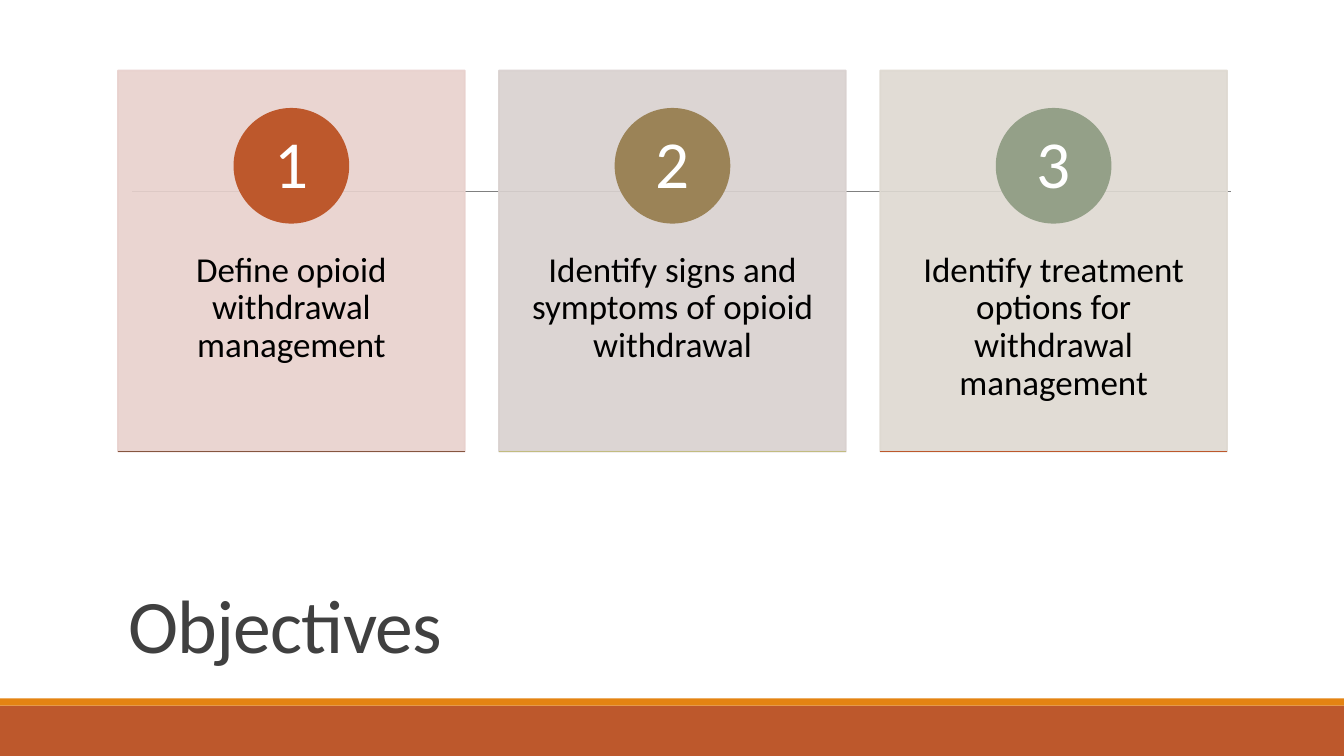
from dataclasses import dataclass

from lxml import etree
from pptx import Presentation
from pptx.dml.color import RGBColor
from pptx.enum.shapes import MSO_CONNECTOR, MSO_SHAPE
from pptx.enum.text import MSO_ANCHOR, PP_ALIGN
from pptx.oxml.ns import qn
from pptx.util import Inches, Pt

RECT, OVAL = MSO_SHAPE.RECTANGLE, MSO_SHAPE.OVAL
STRAIGHT = MSO_CONNECTOR.STRAIGHT
TOP, MIDDLE, BOTTOM = MSO_ANCHOR.TOP, MSO_ANCHOR.MIDDLE, MSO_ANCHOR.BOTTOM
LEFT, CENTER = PP_ALIGN.LEFT, PP_ALIGN.CENTER

SLIDE_W, SLIDE_H = 13.33, 7.5
GRID_LEFT, COLUMN_STEP = 1.17, 3.78
CARD_TOP, CARD_W, CARD_H = 0.7, 3.44, 3.78
TEXT_TOP, TEXT_H = 2.14, 2.27
BADGE_TOP, BADGE_SIZE = 1.08, 1.13
NUMBER_TOP, NUMBER_SIZE = 1.25, 0.8
TITLE_BOX = (GRID_LEFT, 4.93, 11, 1.76)
BAND_TOP, STRIPE_H = 7, 0.07
RULE_LEFT, RULE_RIGHT, RULE_Y = 1.31, 12.21, 1.9
CARD_ALPHA = 90

COLORS = {
    "band": "BD582C",
    "stripe": "E48312",
    "rule": "808080",
    "title": "404040",
    "text": "000000",
    "number": "FFFFFF",
}


@dataclass(frozen=True)
class Objective:
    text: str
    card: str
    badge: str
    base: str


@dataclass(frozen=True)
class TextStyle:
    size: float
    color: str
    align: PP_ALIGN
    anchor: MSO_ANCHOR
    spacing: float
    insets: tuple[float, float]


TITLE = TextStyle(54, COLORS["title"], LEFT, BOTTOM, 0.85, (0.1, 0.05))
BODY = TextStyle(25, COLORS["text"], CENTER, TOP, 0.9, (0.27, 0.36))
NUMBER = TextStyle(48, COLORS["number"], CENTER, MIDDLE, 0.9, (0.09, 0.01))

OBJECTIVES = [
    Objective("Define opioid withdrawal management", "E8D1CD", "BD582C", "865640"),
    Objective("Identify signs and symptoms of opioid withdrawal", "D9D1CF", "9B8357", "C2BC80"),
    Objective("Identify treatment options for withdrawal management", "DED9D1", "94A088", "BD582C"),
]


def set_all(target, values: dict) -> None:
    for name, value in values.items():
        setattr(target, name, value)


def write(sp, text: str, style: TextStyle):
    tf = sp.text_frame
    side, edge = (Inches(v) for v in style.insets)
    set_all(tf, {
        "word_wrap": True, "vertical_anchor": style.anchor,
        "margin_left": side, "margin_right": side,
        "margin_top": edge, "margin_bottom": edge,
    })
    p = tf.paragraphs[0]
    set_all(p, {"alignment": style.align, "line_spacing": style.spacing})
    r = p.add_run()
    r.text = text
    set_all(r.font, {"name": "Calibri", "size": Pt(style.size)})
    r.font.color.rgb = RGBColor.from_string(style.color)
    return r


def add_text(s, box: tuple, text: str, style: TextStyle) -> None:
    write(s.shapes.add_textbox(*map(Inches, box)), text, style)


def add_block(s, kind: MSO_SHAPE, box: tuple, color: str,
              line_width: float = 0, alpha: int = 100) -> None:
    sp = s.shapes.add_shape(kind, *map(Inches, box))
    sp.shadow.inherit = False
    sp.fill.solid()
    sp.fill.fore_color.rgb = RGBColor.from_string(color)
    if line_width:
        sp.line.color.rgb = RGBColor.from_string(color)
        sp.line.width = Pt(line_width)
    else:
        sp.line.fill.background()
    if alpha < 100:
        for clr in sp.element.spPr.iter(qn("a:srgbClr")):
            etree.SubElement(clr, qn("a:alpha")).set("val", str(alpha * 1000))


def add_rule(s, x1: float, x2: float, y: float, color: str, width: float) -> None:
    line = s.shapes.add_connector(STRAIGHT, *map(Inches, (x1, y, x2, y)))
    line.line.color.rgb = RGBColor.from_string(color)
    line.line.width = Pt(width)
    etree.SubElement(line.element.spPr, qn("a:effectLst"))


def add_title(s, text: str) -> None:
    sp = s.shapes.title
    set_all(sp, dict(zip(("left", "top", "width", "height"), map(Inches, TITLE_BOX))))
    r = write(sp, text, TITLE)
    r.font.element.set("spc", "-50") if hasattr(r.font, "element") else r._r.get_or_add_rPr().set("spc", "-50")


def add_objective(s, index: int, item: Objective) -> None:
    x = GRID_LEFT + index * COLUMN_STEP
    badge_x = x + (CARD_W - BADGE_SIZE) / 2
    number_x = x + (CARD_W - NUMBER_SIZE) / 2
    add_block(s, RECT, (x, CARD_TOP, CARD_W, CARD_H), item.card, 1.25, CARD_ALPHA)
    add_text(s, (x, TEXT_TOP, CARD_W, TEXT_H), item.text, BODY)
    add_block(s, OVAL, (badge_x, BADGE_TOP, BADGE_SIZE, BADGE_SIZE), item.badge, 1.25)
    add_text(s, (number_x, NUMBER_TOP, NUMBER_SIZE, NUMBER_SIZE), str(index + 1), NUMBER)
    add_rule(s, x, x + CARD_W, CARD_TOP + CARD_H, item.base, 1.25)


def main() -> None:
    prs = Presentation()
    set_all(prs, {"slide_width": Inches(SLIDE_W), "slide_height": Inches(SLIDE_H)})
    s = prs.slides.add_slide(prs.slide_layouts[5])
    add_block(s, RECT, (0, BAND_TOP, SLIDE_W, SLIDE_H - BAND_TOP), COLORS["band"])
    add_block(s, RECT, (0, BAND_TOP - STRIPE_H, SLIDE_W, STRIPE_H), COLORS["stripe"])
    add_rule(s, RULE_LEFT, RULE_RIGHT, RULE_Y, COLORS["rule"], 0.5)
    add_title(s, "Objectives")
    for index, item in enumerate(OBJECTIVES):
        add_objective(s, index, item)
    prs.save("out.pptx")


if __name__ == "__main__":
    main()
